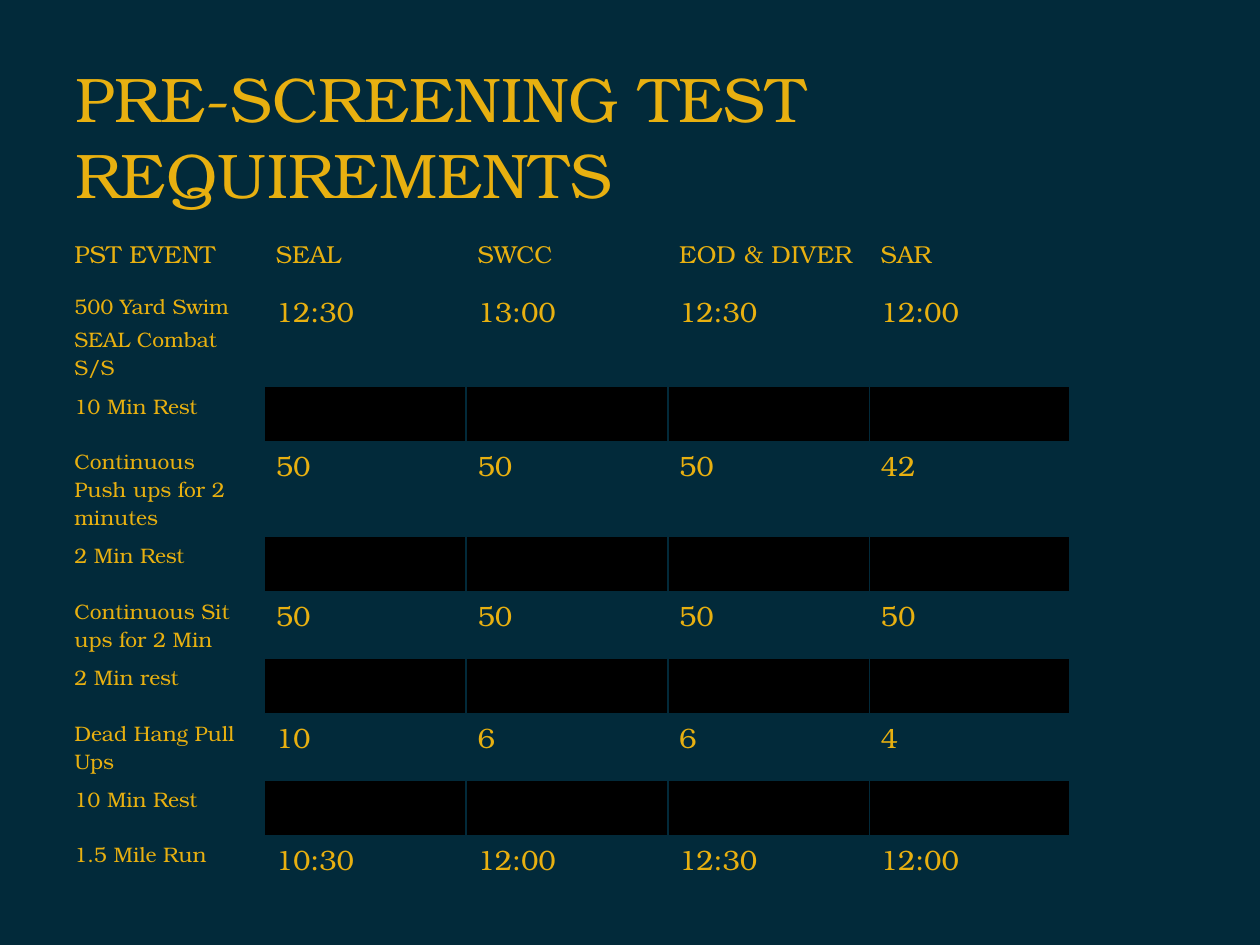
from pptx import Presentation
from pptx.dml.color import RGBColor
from pptx.enum.text import MSO_ANCHOR, PP_ALIGN
from pptx.oxml import parse_xml
from pptx.oxml.ns import nsdecls
from pptx.util import Inches, Pt

LEFT = PP_ALIGN.LEFT
MIDDLE = MSO_ANCHOR.MIDDLE
NAVY = RGBColor(0x02, 0x2A, 0x3A)
GOLD = RGBColor(0xE8, 0xB0, 0x10)
BLACK = RGBColor(0, 0, 0)
FONT = "TeX Gyre Bonum"
ROWS = [
    (0.44, ["PST EVENT", "SEAL", "SWCC", "EOD & DIVER", "SAR"]),
    (0.55, ["500 Yard Swim\nSEAL Combat S/S", "12:30", "13:00", "12:30", "12:00"]),
    (0.44, ["10 Min Rest"]),
    (0.5, ["Continuous Push ups for 2 minutes", "50", "50", "50", "42"]),
    (0.44, ["2 Min Rest"]),
    (0.5, ["Continuous Sit ups for 2 Min", "50", "50", "50", "50"]),
    (0.44, ["2 Min rest"]),
    (0.5, ["Dead Hang Pull Ups", "10", "6", "6", "4"]),
    (0.44, ["10 Min Rest"]),
    (0.44, ["1.5 Mile Run", "10:30", "12:00", "12:30", "12:00"]),
]
COLS = 5


def style(para, size):
    para.alignment = LEFT
    para.font.name = FONT
    para.font.size = Pt(size)
    para.font.color.rgb = GOLD


def border(cell, side, outer):
    width = Pt(2.25 if outer else 1)
    line = parse_xml(
        f'<a:{side} {nsdecls("a")} w="{width}"><a:solidFill>'
        f'<a:srgbClr val="{NAVY}"/></a:solidFill></a:{side}>'
    )
    cell._tc.get_or_add_tcPr().append(line)


prs = Presentation()
prs.slide_width = Inches(10)
prs.slide_height = Inches(7.5)
slide = prs.slides.add_slide(prs.slide_layouts[5])
slide.background.fill.solid()
slide.background.fill.fore_color.rgb = NAVY

title = slide.shapes.title
title.left, title.top = Inches(0.5), Inches(0.32)
title.width, title.height = Inches(9), Inches(1.51)
title.text_frame.text = "PRE-SCREENING TEST REQUIREMENTS"
title.text_frame.vertical_anchor = MIDDLE
style(title.text_frame.paragraphs[0], 36)

height = sum(tall for tall, texts in ROWS)
frame = slide.shapes.add_table(
    len(ROWS), COLS, Inches(0.5), Inches(1.84), Inches(8), Inches(height)
)
table = frame.table
table.first_row = False
table.horz_banding = False

for r, (tall, texts) in enumerate(ROWS):
    table.rows[r].height = Inches(tall)
    for c in range(COLS):
        cell = table.cell(r, c)
        cell.margin_left = cell.margin_right = Inches(0.09)
        cell.margin_top = cell.margin_bottom = Inches(0.04)
        border(cell, "lnL", c == 0)
        border(cell, "lnR", c == COLS - 1)
        border(cell, "lnT", r == 0)
        border(cell, "lnB", r == len(ROWS) - 1)
        if c >= len(texts):
            cell.fill.solid()
            cell.fill.fore_color.rgb = BLACK
            continue
        cell.fill.background()
        cell.text = texts[c]
        size = 14 if r == 0 else 12 if c == 0 else 16
        for n, para in enumerate(cell.text_frame.paragraphs):
            style(para, size)
            if n:
                para.space_before = Pt(2.8)

prs.save("out.pptx")
